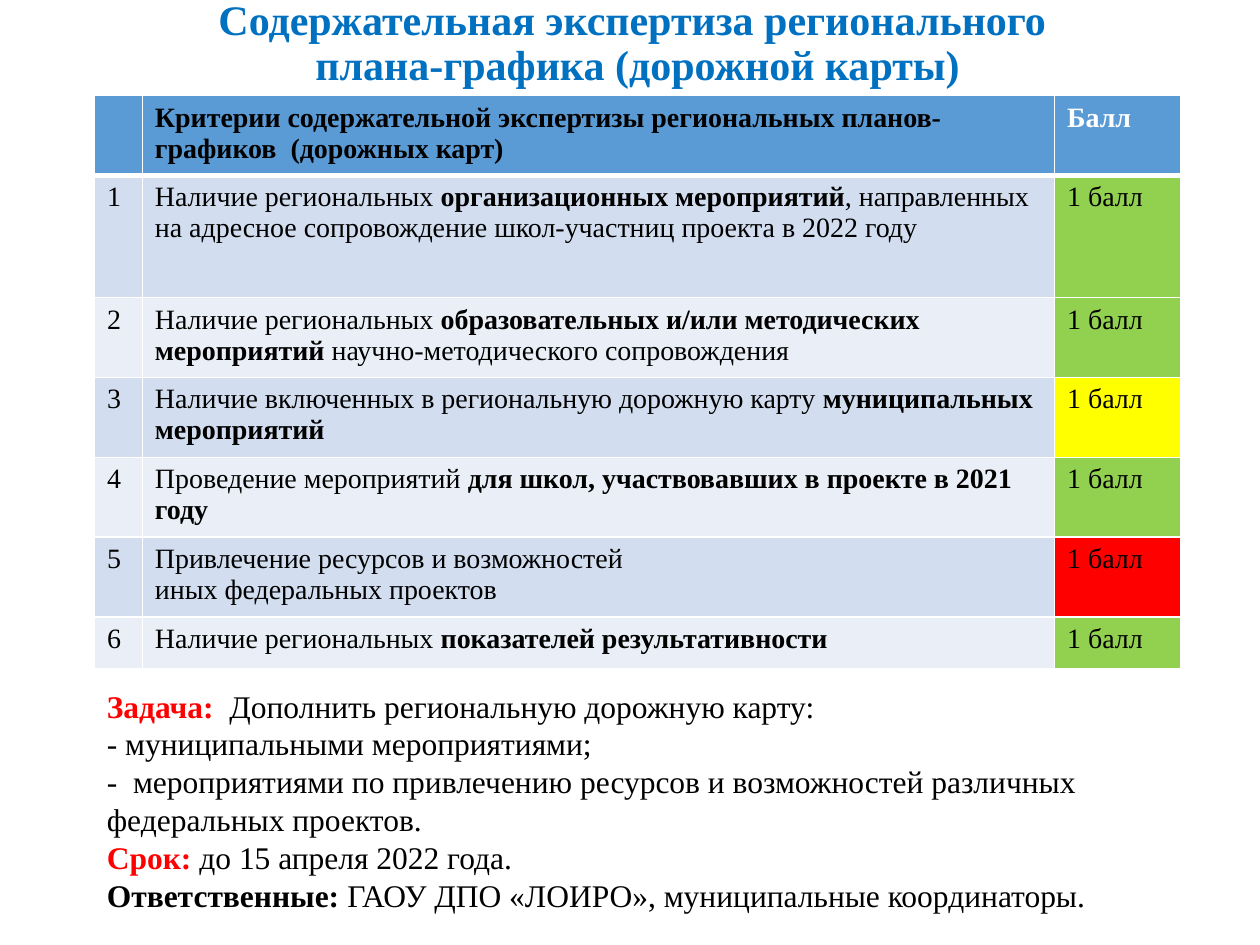
"""Builds the slide on the content review of a regional roadmap."""
from dataclasses import dataclass

from lxml.etree import SubElement
from pptx import Presentation
from pptx.dml.color import RGBColor as Rgb
from pptx.enum.text import MSO_ANCHOR as Anchor, PP_ALIGN as Align
from pptx.oxml.ns import qn
from pptx.util import Inches, Pt


@dataclass(frozen=True)
class Theme:
    font: str = "Times New Roman"
    title_size: int = 24
    body_size: int = 18
    table_size: int = 16
    title: str = "0070C0"
    ink: str = "000000"
    white: str = "FFFFFF"
    header: str = "5B9BD5"
    odd_row: str = "D2DEEF"
    even_row: str = "EAEFF7"
    green: str = "92D050"
    yellow: str = "FFFF00"
    red: str = "FF0000"


THEME = Theme()


def span(text, bold=False, color=THEME.ink):
    """Describes a piece of text and its format."""
    return text, bold, color


def strong(text):
    return span(text, bold=True)


class SlideBuilder:
    """Holds the theme and the current slide."""

    def __init__(self, slide, theme):
        self.slide = slide
        self.theme = theme

    def fill_text(self, frame, paragraphs, size, align=Align.LEFT, spacing=None):
        for index, spans in enumerate(paragraphs):
            paragraph = frame.add_paragraph() if index else frame.paragraphs[0]
            paragraph.alignment = align
            paragraph.line_spacing = spacing
            for text, bold, color in spans:
                if text == "\n":
                    paragraph.add_line_break()
                    continue
                run = paragraph.add_run()
                run.text = text
                run.font.name = self.theme.font
                run.font.size = Pt(size)
                run.font.bold = bold
                run.font.color.rgb = Rgb.from_string(color)

    def text(self, box, paragraphs, size, anchor=Anchor.TOP, **layout):
        frame = self.slide.shapes.add_textbox(*map(Inches, box)).text_frame
        frame.word_wrap = True
        frame.vertical_anchor = anchor
        self.fill_text(frame, paragraphs, size, **layout)

    def borders(self, cell, widths):
        properties = cell._tc.get_or_add_tcPr()
        for side, width in widths.items():
            line = SubElement(properties, qn(f"a:ln{side}"), w=str(Pt(width)))
            solid = SubElement(line, qn("a:solidFill"))
            SubElement(solid, qn("a:srgbClr"), val=self.theme.white)

    def table(self, box, widths, heights, rows):
        grid = self.slide.shapes.add_table(
            len(rows), len(widths), *map(Inches, box)).table
        for column, width in zip(grid.columns, widths):
            column.width = Inches(width)
        for index, (row, height, entries) in enumerate(
                zip(grid.rows, heights, rows)):
            row.height = Inches(height)
            top, bottom = {0: (1, 3), 1: (3, 1)}.get(index, (1, 1))
            for cell, (paragraphs, fill) in zip(row.cells, entries):
                self.borders(cell, {"L": 1, "R": 1, "T": top, "B": bottom})
                cell.fill.solid()
                cell.fill.fore_color.rgb = Rgb.from_string(fill)
                self.fill_text(cell.text_frame, paragraphs,
                               self.theme.table_size)


HEADER = [
    [],
    [[strong("Критерии содержательной экспертизы региональных "
             "планов-графиков  (дорожных карт)")]],
    [[span("Балл", bold=True, color=THEME.white)]],
]
CRITERIA = [
    ([[span("Наличие региональных "), strong("организационных мероприятий"),
       span(", направленных на адресное сопровождение школ-участниц "
            "проекта в 2022 году")]], THEME.green),
    ([[span("Наличие региональных "),
       strong("образовательных и/или методических мероприятий "),
       span("научно-методического сопровождения")]], THEME.green),
    ([[span("Наличие включенных в региональную дорожную карту "),
       strong("муниципальных мероприятий")]], THEME.yellow),
    ([[span("Проведение мероприятий "),
       strong("для школ, участвовавших в проекте в 2021 году")]], THEME.green),
    ([[span("Привлечение ресурсов и возможностей")],
      [span("иных федеральных проектов")]], THEME.red),
    ([[span("Наличие региональных "),
       strong("показателей результативности")]], THEME.green),
]
TASKS = [
    [span("Задача:  ", bold=True, color=THEME.red),
     span("Дополнить региональную дорожную карту:")],
    [span("- муниципальными мероприятиями;")],
    [span("-  мероприятиями по привлечению ресурсов и возможностей "
          "различных федеральных проектов.")],
    [span("Срок:", bold=True, color=THEME.red),
     span(" до 15 апреля 2022 года.")],
    [strong("Ответственные:"),
     span(" ГАОУ ДПО «ЛОИРО», муниципальные координаторы.")],
]


def criteria_rows(theme):
    rows = [[(paragraphs, theme.header) for paragraphs in HEADER]]
    for number, (criterion, score_fill) in enumerate(CRITERIA, 1):
        band = theme.odd_row if number % 2 else theme.even_row
        rows.append([([[span(str(number))]], band), (criterion, band),
                     ([[span("1 балл")]], score_fill)])
    return rows


def main():
    deck = Presentation()
    deck.slide_width, deck.slide_height = Inches(10), Inches(7.5)
    builder = SlideBuilder(deck.slides.add_slide(deck.slide_layouts[6]), THEME)
    heading = [span(text, bold=True, color=THEME.title) for text in (
        "Содержательная экспертиза регионального ", "\n",
        "плана-графика (дорожной карты)")]
    builder.text((0.75, 0.13, 8.62, 0.44), [heading], THEME.title_size,
                 anchor=Anchor.MIDDLE, align=Align.CENTER, spacing=0.9)
    builder.table((0.75, 0.76, 8.62, 4.54), (0.38, 7.24, 1),
                  (0.63, 0.97, *[0.63] * 4, 0.41), criteria_rows(THEME))
    builder.text((0.75, 5.4, 8.9, 1.92), TASKS, THEME.body_size)
    deck.save("out.pptx")


if __name__ == "__main__":
    main()
